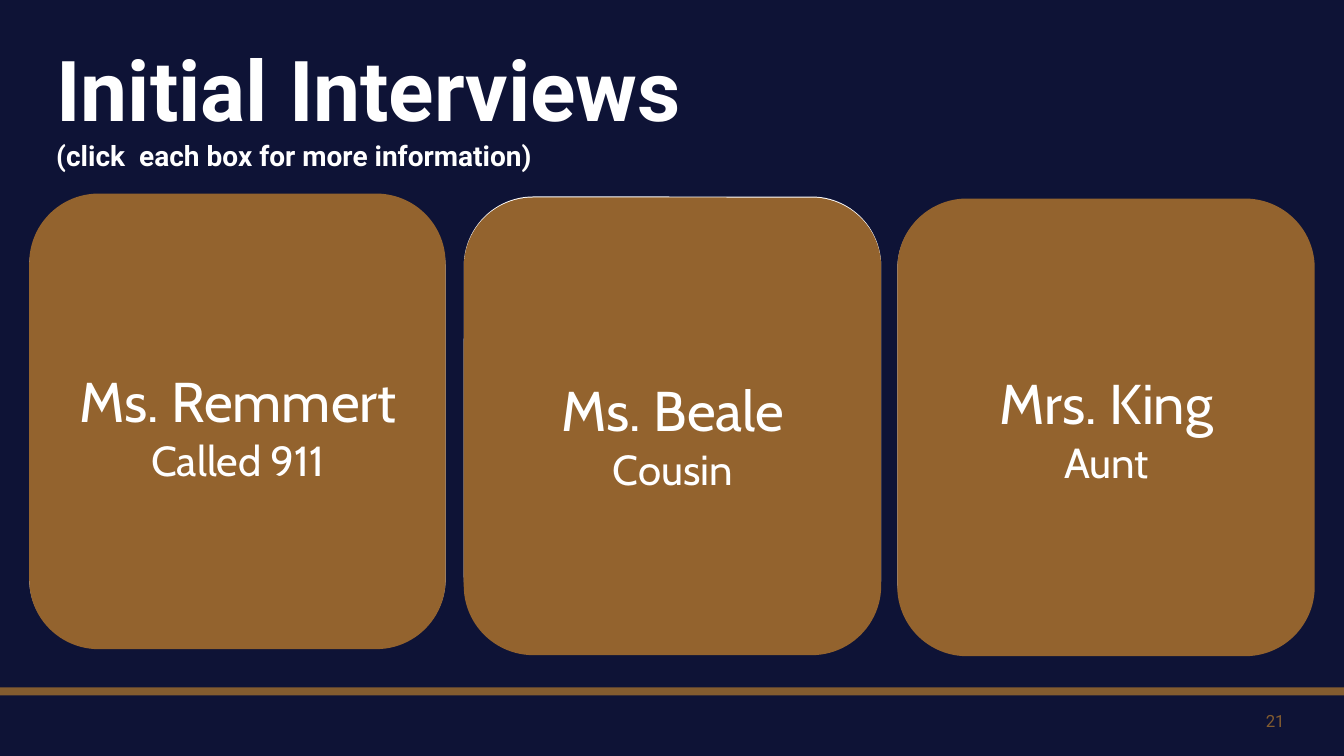
from pptx import Presentation
from pptx.dml.color import RGBColor
from pptx.enum.shapes import MSO_SHAPE as Shape
from pptx.enum.text import MSO_ANCHOR as Anchor, PP_ALIGN as Align
from pptx.util import Inches, Pt

# Content
TITLE = "Initial Interviews"
HINT = "(click  each box for more information)"
PAGE_NUMBER = "21"
# name, role, card box, backing box, text box (left, top, width, height)
INTERVIEWS = [
    ("Mrs. King", "Aunt", (8.9, 1.97, 4.14, 4.54),
     (8.9, 1.98, 4.13, 4.47), (9.16, 3.61, 3.63, 1.28)),
    ("Ms. Beale", "Cousin", (4.6, 1.96, 4.14, 4.54),
     (4.6, 1.95, 4.14, 4.46), (4.86, 3.68, 3.63, 1.28)),
    ("Ms. Remmert", "Called 911", (0.29, 1.92, 4.13, 4.52),
     (0.29, 1.96, 4.13, 4.47), (0.55, 3.59, 3.62, 1.29)),
]
COLORS = {"background": "0E1336", "rule": "835C2F",
          "card": "93632E", "white": "FFFFFF"}


def color(name):
    return RGBColor.from_string(COLORS[name])


def inches(box):
    return [Inches(value) for value in box]


def add_block(slide, kind, box, fill):
    shape = slide.shapes.add_shape(kind, *inches(box))
    shape.shadow.inherit = False
    shape.fill.solid()
    shape.fill.fore_color.rgb = color(fill)
    shape.line.fill.background()


def write(frame, lines, font_name, fill, align=Align.LEFT,
          anchor=Anchor.TOP, bold=False):
    """Fill a text frame with (text, size) lines."""
    frame.word_wrap = True
    frame.vertical_anchor = anchor
    frame.text = "\n".join(text for text, _ in lines)
    for paragraph, (_, size) in zip(frame.paragraphs, lines):
        paragraph.alignment = align
        font = paragraph.font
        font.name, font.size, font.bold = font_name, Pt(size), bold
        font.color.rgb = color(fill)


def add_text(slide, box, *args, **options):
    frame = slide.shapes.add_textbox(*inches(box)).text_frame
    write(frame, *args, **options)


def main():
    presentation = Presentation()
    presentation.slide_width, presentation.slide_height = inches((13.33, 7.5))
    slide = presentation.slides.add_slide(presentation.slide_layouts[5])
    slide.background.fill.solid()
    slide.background.fill.fore_color.rgb = color("background")

    # Footer rule and page number
    add_block(slide, Shape.RECTANGLE, (0, 6.82, 13.33, 0.08), "rule")
    add_text(slide, (9.84, 6.95, 3, 0.4), [(PAGE_NUMBER, 12)], "Roboto",
             "rule", align=Align.RIGHT, anchor=Anchor.MIDDLE)

    # Title and hint
    title = slide.shapes.title
    title.left, title.top, title.width, title.height = inches(
        (0.46, 0.44, 7.8, 0.73))
    write(title.text_frame, [(TITLE, 60)], "Roboto", "white", bold=True)
    title.text_frame.paragraphs[0].line_spacing = 0.9
    add_text(slide, (0.46, 1.33, 8.26, 0.43), [(HINT, 20)], "Roboto",
             "white", anchor=Anchor.BOTTOM, bold=True)

    # Interview cards
    for name, role, card, backing, text_box in INTERVIEWS:
        add_block(slide, Shape.ROUNDED_RECTANGLE, backing, "white")
        add_block(slide, Shape.ROUNDED_RECTANGLE, card, "card")
        add_text(slide, text_box, [(name, 40), (role, 30)], "Cabin",
                 "white", align=Align.CENTER)

    presentation.save("out.pptx")


if __name__ == "__main__":
    main()
